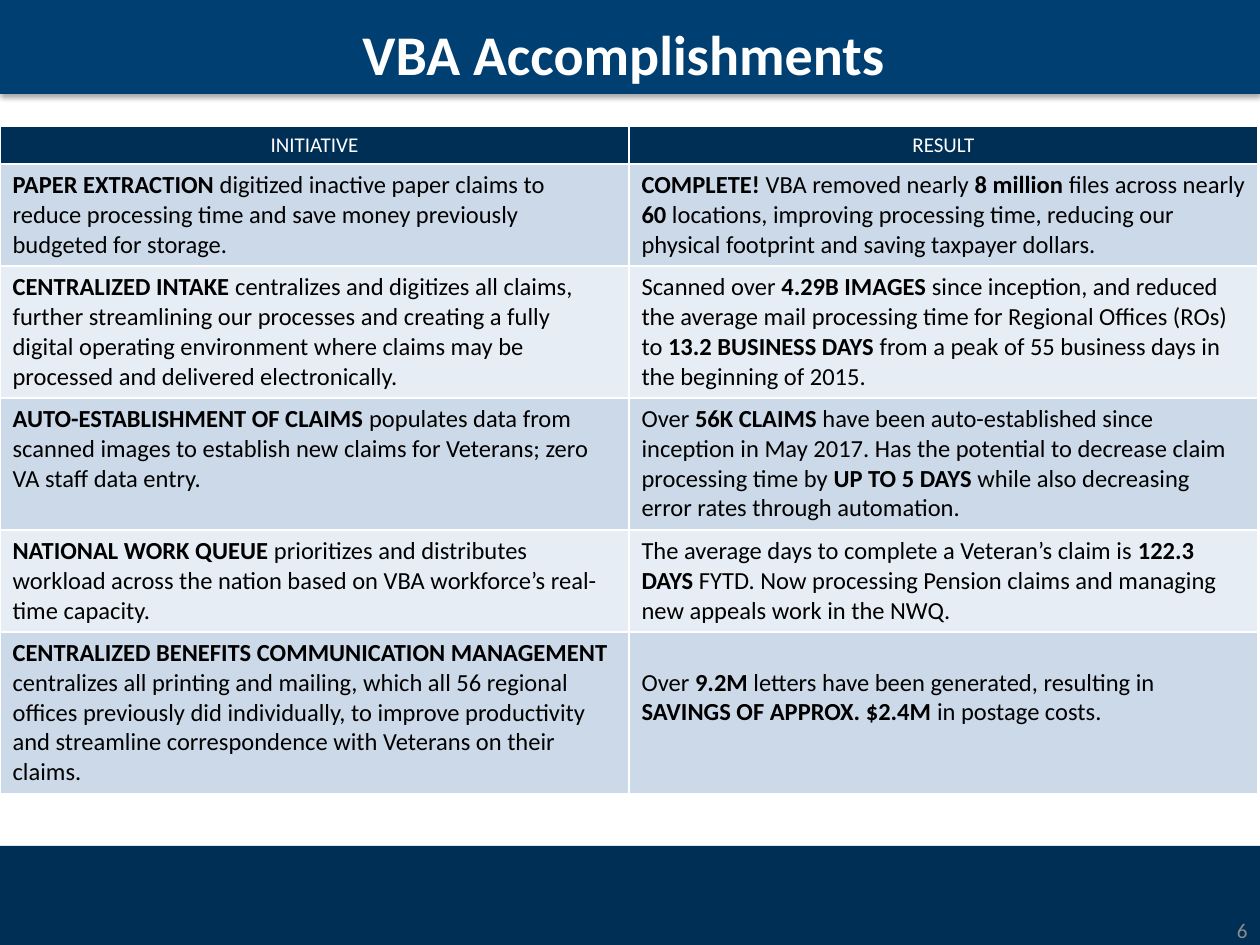
from dataclasses import dataclass

from lxml import etree
from pptx import Presentation
from pptx import util as u
from pptx.dml.color import RGBColor
from pptx.enum import shapes, text
from pptx.oxml import parse_xml
from pptx.oxml.ns import nsdecls, qn

SCALE = u.Inches(1) / 126  # EMU in one px
FONT = "Calibri"
NAVY = RGBColor(0x00, 0x2F, 0x56)
BLUE = RGBColor(0x00, 0x3F, 0x72)
PALE = RGBColor(0xCC, 0xD9, 0xE8)
PALER = RGBColor(0xE7, 0xED, 0xF4)
GREY = RGBColor(0x8C, 0x8C, 0x8C)
WHITE = RGBColor(0xFF, 0xFF, 0xFF)
BLACK = RGBColor(0x00, 0x00, 0x00)
LEFT, CENTER, RIGHT = text.PP_ALIGN.LEFT, text.PP_ALIGN.CENTER, text.PP_ALIGN.RIGHT


@dataclass
class Row:
    """One table row; **double stars** enclose bold words."""
    height: int
    initiative: str
    result: str
    result_drop: int = 0  # extra space above the result


HEADER = Row(38, "INITIATIVE", "RESULT")
ROWS = [
    Row(102,
        "**PAPER EXTRACTION **digitized inactive paper claims to reduce processing time "
        "and save money previously budgeted for storage.",
        "**COMPLETE! **VBA removed nearly **8 million** files across nearly **60** locations, "
        "improving processing time, reducing our physical footprint and saving taxpayer dollars."),
    Row(132,
        "**CENTRALIZED INTAKE **centralizes and digitizes all claims, further streamlining our "
        "processes and creating a fully digital operating environment where claims may be "
        "processed and delivered electronically.",
        "Scanned over **4.29B IMAGES **since inception, and reduced the average mail processing "
        "time for Regional Offices (ROs) to **13.2 BUSINESS DAYS **from a peak of 55 business "
        "days in the beginning of 2015."),
    Row(132,
        "**AUTO-ESTABLISHMENT OF CLAIMS **populates data from scanned images to establish new "
        "claims for Veterans; zero VA staff data entry.",
        "Over **56K CLAIMS** have been auto-established since inception in May 2017. Has the "
        "potential to decrease claim processing time by **UP TO 5 DAYS** while also decreasing "
        "error rates through automation."),
    Row(102,
        "**NATIONAL WORK QUEUE **prioritizes and distributes workload across the nation based "
        "on VBA workforce’s real-time capacity.",
        "The average days to complete a Veteran’s claim is **122.3 DAYS **FYTD. Now processing "
        "Pension claims and managing new appeals work in the NWQ."),
    Row(162,
        "**CENTRALIZED BENEFITS COMMUNICATION MANAGEMENT **centralizes all printing and mailing, "
        "which all 56 regional offices previously did individually, to improve productivity and "
        "streamline correspondence with Veterans on their claims.",
        "Over **9.2M** letters have been generated, resulting in **SAVINGS OF APPROX. $2.4M** "
        "in postage costs.",
        result_drop=30),
]


def px(length: int) -> int:
    return round(length * SCALE)


def write(frame, words: str, *, size: int, color: RGBColor, align=LEFT, bold=False) -> None:
    """Fill a text frame, switching bold at each pair of stars."""
    para = frame.paragraphs[0]
    para.alignment = align
    for index, part in enumerate(words.split("**")):
        if part:
            span = para.add_run()
            span.text = part
            span.font.name = FONT
            span.font.size = u.Pt(size)
            span.font.bold = bold or index % 2 == 1
            span.font.color.rgb = color


def add_band(page, top: int, height: int, color: RGBColor):
    band = page.shapes.add_shape(shapes.MSO_SHAPE.RECTANGLE, 0, px(top), px(1260), px(height))
    band.shadow.inherit = False
    band.fill.solid()
    band.fill.fore_color.rgb = color
    band.line.fill.background()
    return band


def add_shadow(shape) -> None:
    effects = shape._element.spPr.find(qn("a:effectLst"))
    effects.append(parse_xml(
        f'<a:outerShdw {nsdecls("a")} blurRad="{u.Pt(3.1)}" dist="{u.Pt(1.8)}" dir="5400000" '
        'algn="t" rotWithShape="0"><a:srgbClr val="000000"><a:alpha val="35000"/></a:srgbClr>'
        '</a:outerShdw>'))


def style_cell(cell, color: RGBColor) -> None:
    """White borders, then the fill, in schema order."""
    properties = cell._tc.get_or_add_tcPr()
    for side in ("lnL", "lnR", "lnT", "lnB"):
        line = etree.SubElement(properties, qn(f"a:{side}"), w=str(u.Pt(1)))
        fill = etree.SubElement(line, qn("a:solidFill"))
        etree.SubElement(fill, qn("a:srgbClr"), val=str(WHITE))
    cell.fill.solid()
    cell.fill.fore_color.rgb = color


def add_results_table(page) -> None:
    rows = [HEADER, *ROWS]
    height = sum(row.height for row in rows)
    table = page.shapes.add_table(len(rows), 2, 0, px(126), px(1258), px(height)).table
    for column in table.columns:
        column.width = px(629)
    for index, row in enumerate(rows):
        table.rows[index].height = px(row.height)
        header = index == 0
        fill = NAVY if header else PALE if index % 2 else PALER
        for cell, words in zip(table.rows[index].cells, (row.initiative, row.result)):
            style_cell(cell, fill)
            write(cell.text_frame, words, size=12 if header else 14,
                  color=WHITE if header else BLACK, align=CENTER if header else LEFT)
        if row.result_drop:
            cell.margin_top = px(6 + row.result_drop)


def main() -> None:
    deck = Presentation()
    deck.slide_width, deck.slide_height = px(1260), px(945)
    page = deck.slides.add_slide(deck.slide_layouts[5])

    # Footer and title bands
    add_band(page, 846, 99, NAVY)
    add_shadow(add_band(page, 0, 94, BLUE))

    # Page number
    box = page.shapes.add_textbox(px(966), px(905), px(294), px(50))
    box.text_frame.word_wrap = True
    box.text_frame.vertical_anchor = text.MSO_ANCHOR.MIDDLE
    write(box.text_frame, "6", size=12, color=GREY, align=RIGHT)

    add_results_table(page)

    # Title, brought in front of its band
    title = page.shapes.title
    title.left, title.top, title.width, title.height = px(63), px(0), px(1134), px(107)
    title.text_frame.vertical_anchor = text.MSO_ANCHOR.MIDDLE
    write(title.text_frame, "VBA Accomplishments ", size=32, color=WHITE, align=CENTER, bold=True)
    page.shapes._spTree.append(title._element)

    deck.save("out.pptx")


if __name__ == "__main__":
    main()
